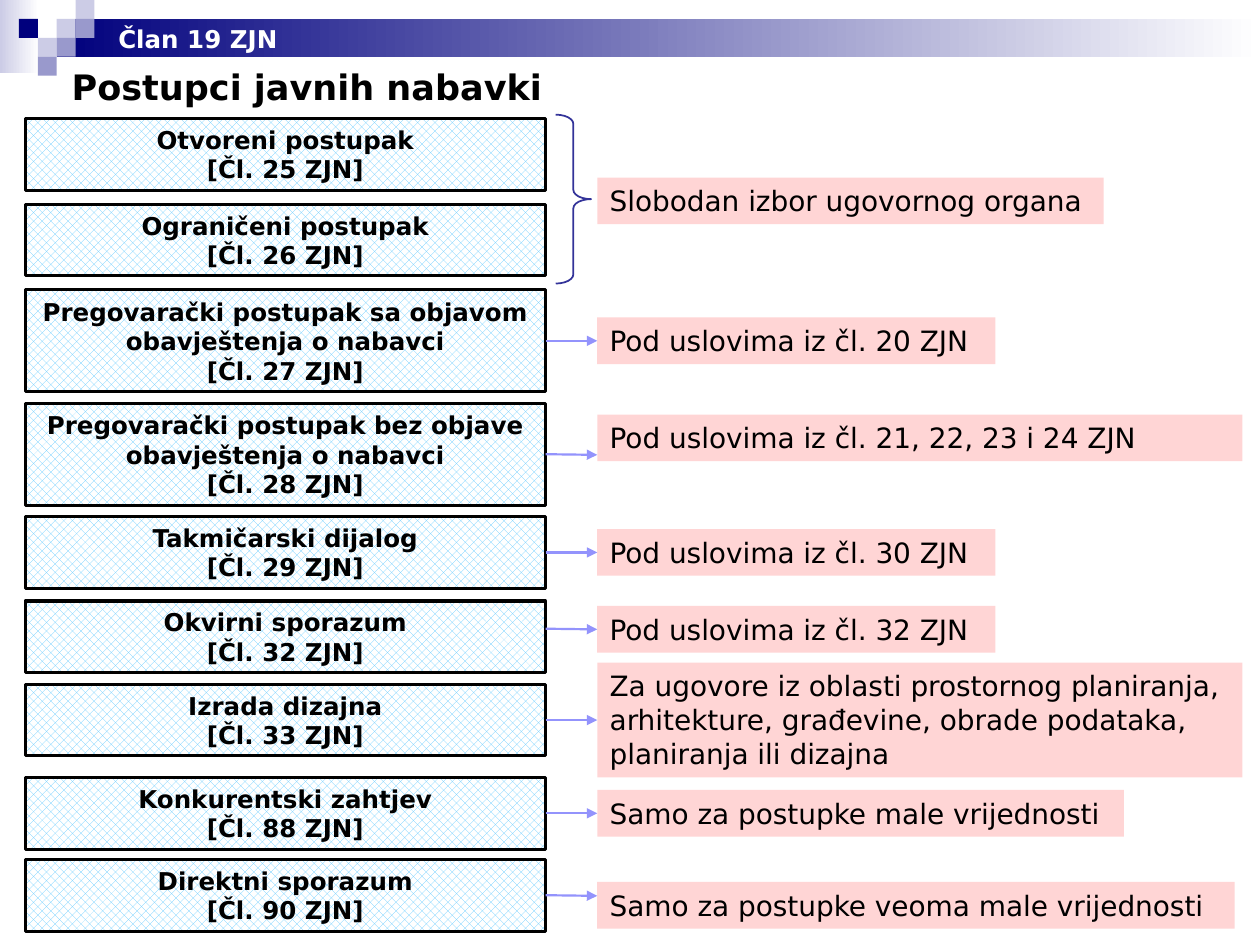
from lxml.etree import SubElement
from pptx import Presentation
from pptx.dml.color import RGBColor
from pptx.enum.dml import MSO_PATTERN
from pptx.enum.shapes import MSO_CONNECTOR, MSO_SHAPE
from pptx.enum.text import MSO_ANCHOR, MSO_AUTO_SIZE, PP_ALIGN
from pptx.oxml.ns import qn
from pptx.util import Inches, Pt

BLACK = RGBColor(0x00, 0x00, 0x00)
WHITE = RGBColor(0xFF, 0xFF, 0xFF)
NAVY = RGBColor(0x00, 0x00, 0x7D)
LAVENDER = RGBColor(0xCC, 0xCC, 0xE6)
VIOLET = RGBColor(0x99, 0x99, 0xCC)
SKY = RGBColor(0x66, 0xCC, 0xFF)
PINK = RGBColor(0xFF, 0xD5, 0xD5)
INDIGO = RGBColor(0x33, 0x33, 0x99)
PERIWINKLE = RGBColor(0x93, 0x93, 0xFC)

FONT = "DejaVu Sans"
CELL = 0.15
PROCEDURE_LEFT, PROCEDURE_WIDTH = 0.2, 4.13
CONDITION_LEFT = 4.74
TWO_LINES, THREE_LINES = 0.57, 0.81

MOSAIC = [
    (3, 1, LAVENDER), (4, 0, LAVENDER), (4, 1, VIOLET), (2, 2, LAVENDER),
    (1, 1, NAVY), (3, 2, VIOLET), (2, 3, VIOLET),
]

PROCEDURES = [
    ("Otvoreni postupak\v[Čl. 25 ZJN]", 0.94, TWO_LINES),
    ("Ograničeni postupak\v[Čl. 26 ZJN]", 1.62, TWO_LINES),
    ("Pregovarački postupak sa objavom obavještenja o nabavci\v[Čl. 27 ZJN]", 2.3, THREE_LINES),
    ("Pregovarački postupak bez objave obavještenja o nabavci\v[Čl. 28 ZJN]", 3.2, THREE_LINES),
    ("Takmičarski dijalog\v[Čl. 29 ZJN]", 4.1, TWO_LINES),
    ("Okvirni sporazum\n[Čl. 32 ZJN]", 4.77, TWO_LINES),
    ("Izrada dizajna\n[Čl. 33 ZJN]", 5.43, TWO_LINES),
    ("Konkurentski zahtjev\n[Čl. 88 ZJN]", 6.17, TWO_LINES),
    ("Direktni sporazum\n[Čl. 90 ZJN]", 6.82, TWO_LINES),
]

SHARED_CONDITION = ("Slobodan izbor ugovornog organa", 1.41, 4.02, 0.37, False)
CONDITIONS = [
    ("Pod uslovima iz čl. 20 ZJN", 2.52, 3.16, 0.37, False),
    ("Pod uslovima iz čl. 21, 22, 23 i 24 ZJN", 3.29, 5.12, 0.37, True),
    ("Pod uslovima iz čl. 30 ZJN", 4.2, 3.16, 0.37, False),
    ("Pod uslovima iz čl. 32 ZJN", 4.81, 3.16, 0.37, False),
    ("Za ugovore iz oblasti prostornog planiranja, arhitekture, građevine, "
     "obrade podataka, planiranja ili dizajna", 5.26, 5.12, 0.91, True),
    ("Samo za postupke male vrijednosti", 6.27, 4.18, 0.37, False),
    ("Samo za postupke veoma male vrijednosti", 7, 5.06, 0.37, True),
]
ARROW_HEIGHTS = [2.71, 3.61, 4.39, 4.99, 5.72, 6.45, 7.11]


def write(box, text, size, color=BLACK, bold=False, align=PP_ALIGN.LEFT,
          anchor=MSO_ANCHOR.TOP, wrap=True):
    frame = box.text_frame
    frame.text = text
    frame.word_wrap = wrap
    frame.auto_size = MSO_AUTO_SIZE.SHAPE_TO_FIT_TEXT
    frame.vertical_anchor = anchor
    for para in frame.paragraphs:
        para.alignment = align
        for span in para.runs:
            span.font.name = FONT
            span.font.size = Pt(size)
            span.font.bold = bold
            span.font.color.rgb = color
        for line_break in para._p.findall(qn("a:br")):
            SubElement(line_break, qn("a:rPr"), sz=str(size * 100))


def add_box(page, left, top, width, height, fill=None, kind=MSO_SHAPE.RECTANGLE):
    box = page.shapes.add_shape(
        kind, Inches(left), Inches(top), Inches(width), Inches(height))
    box.shadow.inherit = False
    box.line.fill.background()
    if fill is None:
        box.fill.background()
    else:
        box.fill.solid()
        box.fill.fore_color.rgb = fill
    return box


def add_fade(page, left, top, width, height, start):
    box = add_box(page, left, top, width, height)
    box.fill.gradient()
    box.fill.gradient_angle = 0
    for stop, color in zip(box.fill.gradient_stops, (start, WHITE)):
        stop.color.rgb = color


def add_banner(page):
    add_fade(page, 0, 0, 0.31, 0.58, LAVENDER)
    add_fade(page, 3 * CELL, CELL, 10 - 3 * CELL, 2 * CELL, NAVY)
    for column, row, color in MOSAIC:
        add_box(page, column * CELL, row * CELL, CELL, CELL, color)


def add_label(page, left, top, width, height, text, **style):
    box = page.shapes.add_textbox(
        Inches(left), Inches(top), Inches(width), Inches(height))
    write(box, text, bold=True, **style)


def add_procedure(page, text, top, height):
    box = add_box(page, PROCEDURE_LEFT, top, PROCEDURE_WIDTH, height)
    box.fill.patterned()
    box.fill.pattern = MSO_PATTERN.PERCENT_50
    box.fill.fore_color.rgb = SKY
    box.fill.back_color.rgb = WHITE
    box.line.color.rgb = BLACK
    box.line.width = Pt(1.75)
    write(box, text, 14, bold=True, align=PP_ALIGN.CENTER, anchor=MSO_ANCHOR.MIDDLE)
    return box


def add_condition(page, text, top, width, height, wrap):
    box = add_box(page, CONDITION_LEFT, top, width, height, PINK)
    write(box, text, 16, wrap=wrap)
    return box


def add_brace(page):
    brace = add_box(page, 4.41, 0.91, 0.28, 1.34, kind=MSO_SHAPE.LEFT_BRACE)
    brace.adjustments[0] = 0.26
    brace.rotation = 180
    brace.line.color.rgb = INDIGO
    brace.line.width = Pt(1)


def is_middle(box, y):
    return abs(box.top + box.height / 2 - y) < Inches(0.02)


def add_arrow(page, procedure, condition, height):
    y = Inches(height)
    arrow = page.shapes.add_connector(
        MSO_CONNECTOR.STRAIGHT, procedure.left + procedure.width, y, condition.left, y)
    if is_middle(procedure, y):
        arrow.begin_connect(procedure, 3)
    if is_middle(condition, y):
        arrow.end_connect(condition, 1)
    arrow.line.color.rgb = PERIWINKLE
    arrow.line.width = Pt(1.25)
    SubElement(arrow.line._get_or_add_ln(), qn("a:tailEnd"), type="triangle")
    SubElement(arrow._element.spPr, qn("a:effectLst"))


def main():
    deck = Presentation()
    deck.slide_width, deck.slide_height = Inches(10), Inches(7.5)
    page = deck.slides.add_slide(deck.slide_layouts[6])
    add_banner(page)
    add_label(page, 0.47, 0.47, 7.21, 0.44, "Postupci javnih nabavki", size=20)
    add_label(page, 0.84, 0.14, 1.51, 0.34, "Član 19 ZJN", size=14, color=WHITE, wrap=False)
    procedures = [add_procedure(page, *entry) for entry in PROCEDURES]
    add_brace(page)
    add_condition(page, *SHARED_CONDITION)
    conditions = [add_condition(page, *entry) for entry in CONDITIONS]
    for procedure, condition, height in zip(procedures[2:], conditions, ARROW_HEIGHTS):
        add_arrow(page, procedure, condition, height)
    deck.save("out.pptx")


if __name__ == "__main__":
    main()
